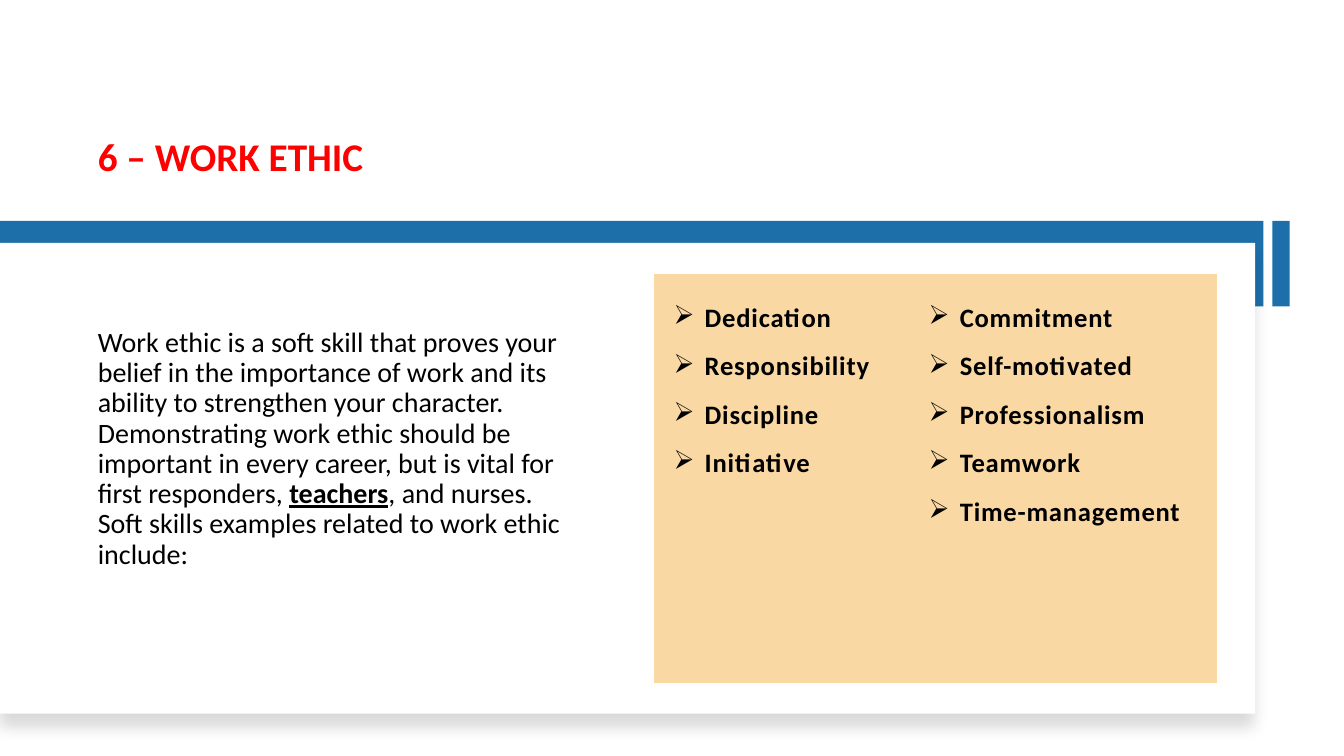
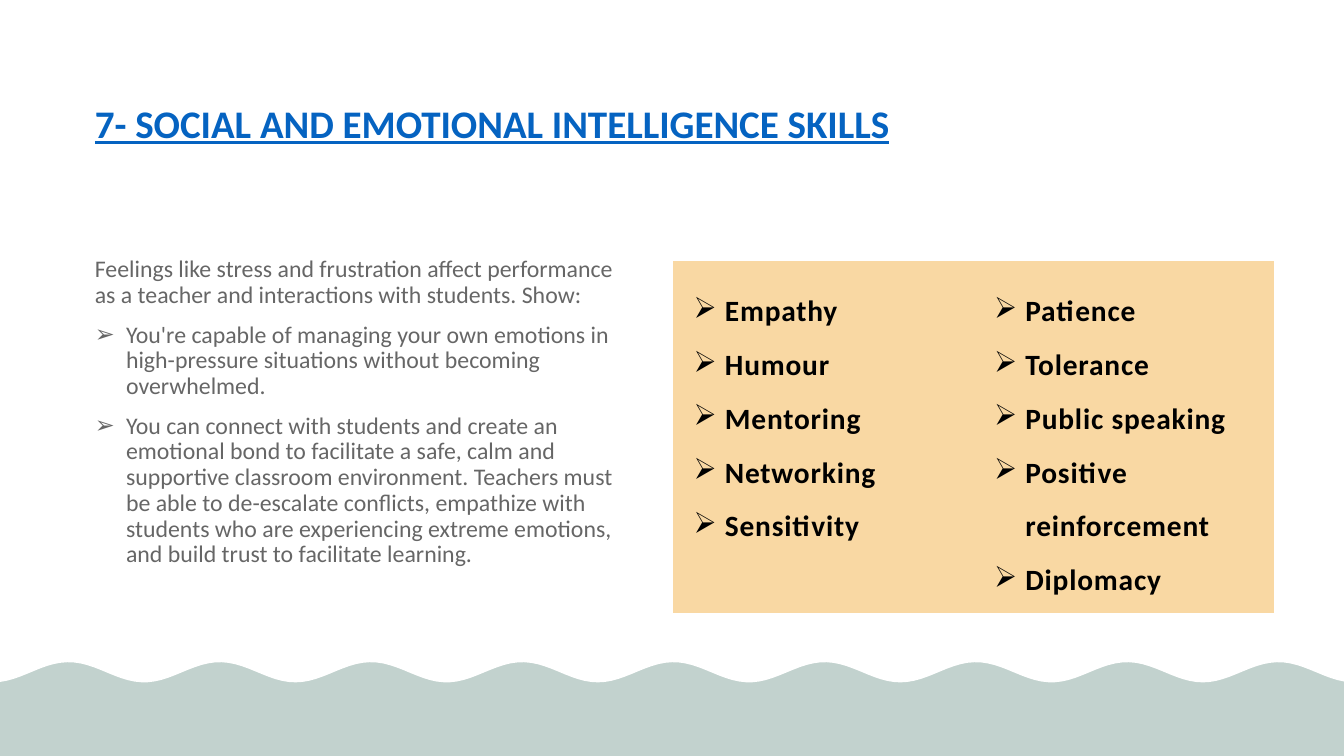
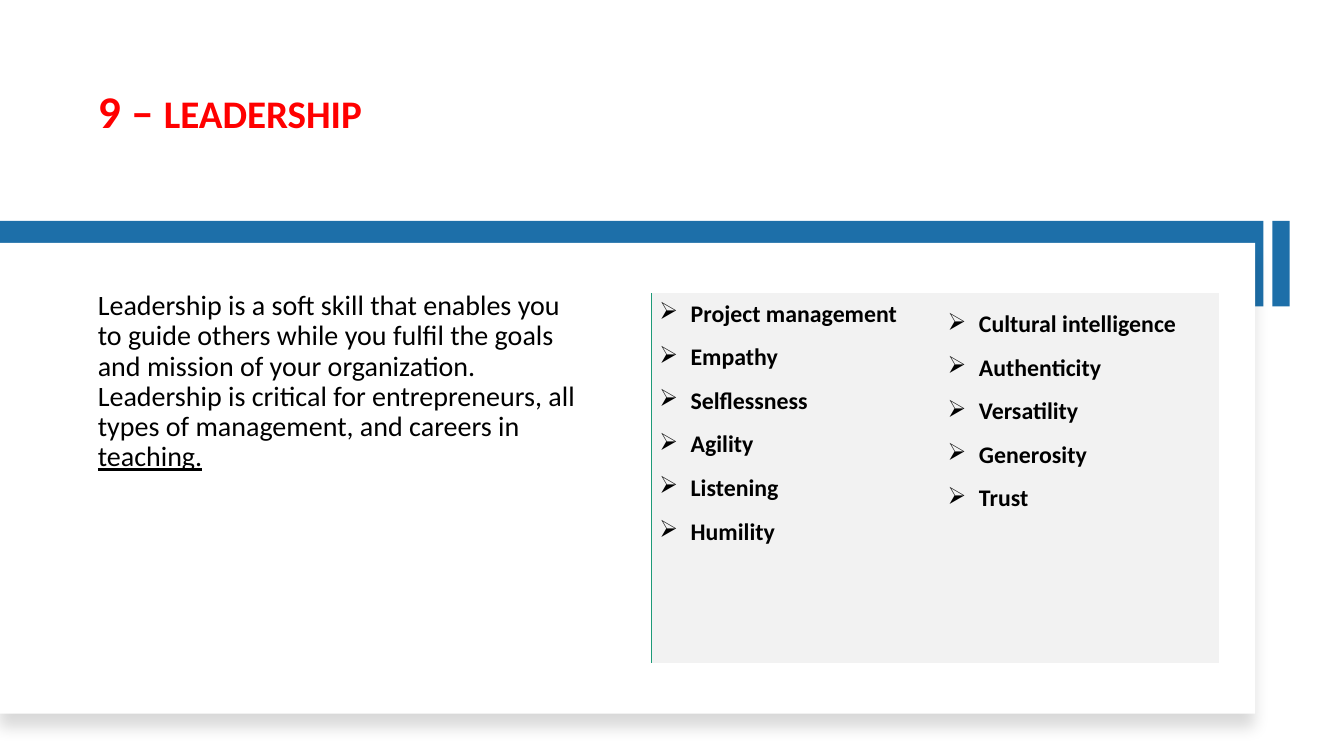
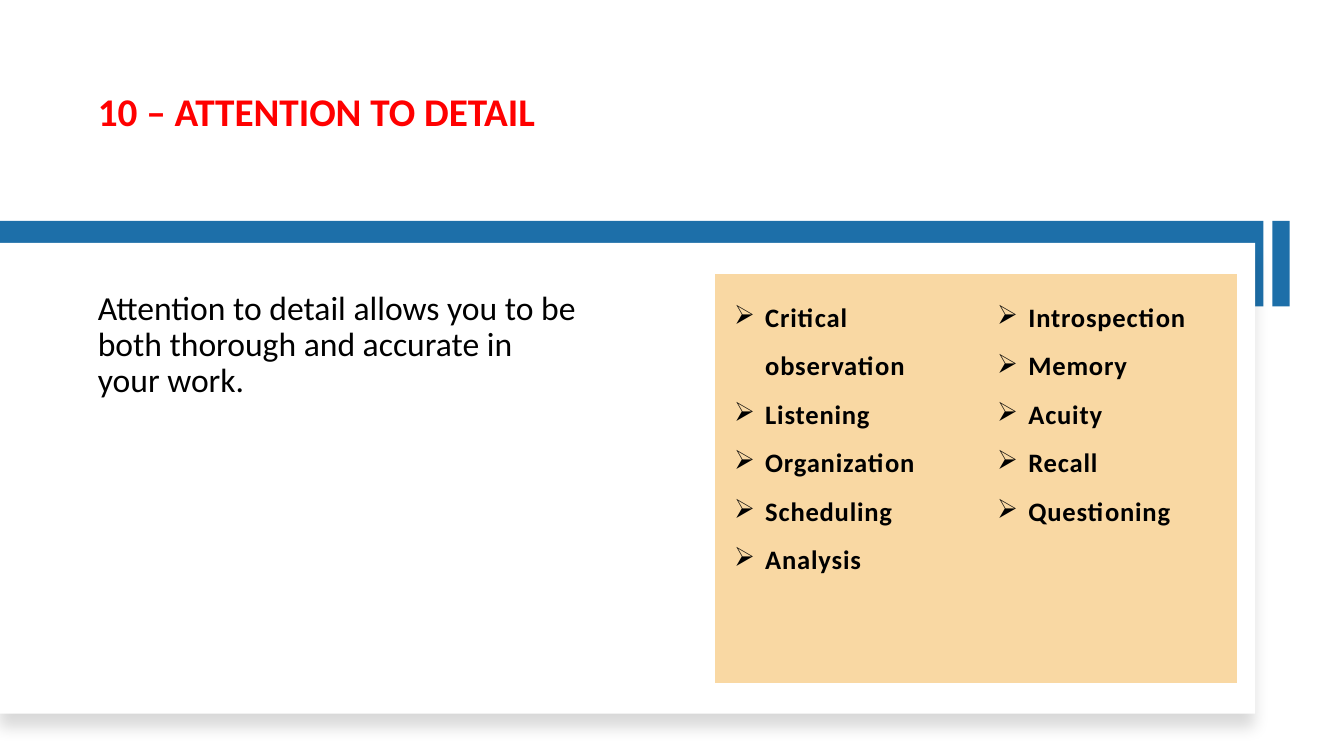
import math
from dataclasses import dataclass
from typing import Any, NamedTuple

import pptx
import pptx.dml.color
import pptx.enum.shapes
import pptx.enum.text
import pptx.oxml
import pptx.oxml.ns
import pptx.util

Inches = pptx.util.Inches
Pt = pptx.util.Pt
Anchor = pptx.enum.text.MSO_ANCHOR
RECT = pptx.enum.shapes.MSO_SHAPE.RECTANGLE

FACE = "Calibri"
INDENT = 0.31
NO_GRID = "{2D5ABB26-0587-4C30-8999-92F81FD0307C}"
COLORS = {
    "white": "FFFFFF",
    "black": "000000",
    "gray": "666666",
    "red": "FF0000",
    "link": "0563C1",
    "blue": "1D6FA9",
    "sea": "0E4D3C",
    "sand": "F9D8A3",
    "pale": "F2F2F2",
    "edge": "1D9A78",
}


class Box(NamedTuple):
    left: float
    top: float
    width: float
    height: float


class Run(NamedTuple):
    text: str
    size: float | None = None
    bold: bool = False
    under: bool = False


@dataclass(frozen=True)
class Para:
    runs: tuple[Run, ...]
    bullet: bool = False


@dataclass(frozen=True)
class Block:
    """Text for a placeholder, with its place and look."""
    paras: tuple[Para, ...]
    size: float
    color: str
    box: Box
    bold: bool = False
    anchor: Any = Anchor.TOP
    pad: tuple[float, float] = (0.05, 0.05)
    gap: float = 0


@dataclass(frozen=True)
class Grid:
    """A one-row table; each column holds a bulleted list."""
    left: float
    top: float
    height: float
    widths: tuple[float, ...]
    lists: tuple[tuple[str, ...], ...]
    size: float = 19
    fill: str = "sand"
    pad: tuple[float, float, float, float] = (0.19, 0.12, 0.19, 0.12)
    space: float = 0.6
    edge: bool = False


@dataclass(frozen=True)
class Page:
    title: Block
    body: Block
    grid: Grid
    waves: bool = False


PAGE = Box(0, 0, 13.33, 7.5)
HEAD = Box(0.87, 0.42, 11.01, 1.42)
TEXT = Box(0.87, 2.84, 4.96, 3.98)


def plain(text: str, bullet: bool = False) -> Para:
    return Para((Run(text),), bullet)


def head(*runs: Run, anchor: Any = Anchor.MIDDLE) -> Block:
    return Block((Para(runs),), 28, "red", HEAD, True, anchor)


PAGES = (
    Page(
        head(Run("6 – WORK ETHIC", bold=True), anchor=Anchor.BOTTOM),
        Block(
            (Para((
                Run("Work ethic is a soft skill that proves your belief in the "
                    "importance of work and its ability to strengthen your "
                    "character. Demonstrating work ethic should be important in "
                    "every career, but is vital for first responders, "),
                Run("teachers", bold=True, under=True),
                Run(", and nurses. Soft skills examples related to work ethic "
                    "include:"),
            )),),
            20, "black", TEXT, anchor=Anchor.MIDDLE, pad=(0.05, 0.8), gap=10),
        Grid(6.49, 2.72, 4.06, (2.53, 3.05), (
            ("Dedication", "Responsibility", "Discipline", "Initiative"),
            ("Commitment", "Self-motivated", "Professionalism", "Teamwork",
             "Time-management"),
        )),
    ),
    Page(
        Block((Para((Run("7- SOCIAL AND EMOTIONAL INTELLIGENCE SKILLS",
                         under=True),)),),
              27.9, "link", Box(0.84, 0.72, 11.79, 1.63), True,
              pad=(0.32, 0.05)),
        Block(
            (plain("Feelings like stress and frustration affect performance as a "
                   "teacher and interactions with students. Show:"),
             plain("You're capable of managing your own emotions in "
                   "high-pressure situations without becoming overwhelmed.", True),
             plain("You can connect with students and create an emotional bond "
                   "to facilitate a safe, calm and supportive classroom "
                   "environment. Teachers must be able to de-escalate conflicts, "
                   "empathize with students who are experiencing extreme "
                   "emotions, and build trust to facilitate learning.", True)),
            17, "gray", Box(0.84, 2.5, 5.48, 3.63), gap=10),
        Grid(6.67, 2.59, 3.46, (2.98, 2.99), (
            ("Empathy", "Humour", "Mentoring", "Networking", "Sensitivity"),
            ("Patience", "Tolerance", "Public speaking",
             "Positive reinforcement", "Diplomacy"),
        ), size=21, pad=(0.21, 0.14, 0.21, 0.14)),
        waves=True,
    ),
    Page(
        head(Run("9 – ", 32.4), Run("LEADERSHIP", 27.9)),
        Block(
            (Para((
                Run("Leadership is a soft skill that enables you to guide others "
                    "while you fulfil the goals and mission of your "
                    "organization. Leadership is critical for entrepreneurs, "
                    "all types of management, and careers in "),
                Run("teaching.", under=True),
            )),),
            20, "black", TEXT, gap=10),
        Grid(6.46, 2.91, 3.67, (2.86, 2.77), (
            ("Project management", "Empathy", "Selflessness", "Agility",
             "Listening", "Humility"),
            ("Cultural intelligence", "Authenticity", "Versatility",
             "Generosity", "Trust"),
        ), size=17, fill="pale", pad=(0.08, 0.02, 0.19, 0.16), space=0,
            edge=True),
    ),
    Page(
        head(Run("10 – ATTENTION TO DETAIL")),
        Block((plain("Attention to detail allows you to be both thorough and "
                     "accurate in your work."),),
              24, "black", TEXT, gap=10),
        Grid(7.09, 2.72, 4.06, (2.61, 2.57), (
            ("Critical observation", "Listening", "Organization", "Scheduling",
             "Analysis"),
            ("Introspection", "Memory", "Acuity", "Recall", "Questioning"),
        )),
    ),
)


def rgb(name: str) -> Any:
    return pptx.dml.color.RGBColor.from_string(COLORS[name])


def node(parent: Any, xml: str) -> None:
    """Append a drawing element given as XML with the prefix a."""
    space = pptx.oxml.ns.nsdecls("a")
    cut = min(i for i in (xml.find(" "), xml.find("/"), xml.find(">")) if i > 0)
    parent.append(pptx.oxml.parse_xml(f"{xml[:cut]} {space}{xml[cut:]}"))


def ink(para: Any, size: float, color: str, bold: bool) -> None:
    for font in (para.font, *(run.font for run in para.runs)):
        font.name = FACE
        font.size = Pt(size)
        font.bold = bold
        font.color.rgb = rgb(color)


def mark(para: Any, bullet: bool) -> None:
    """Give a paragraph the arrow bullet, or none."""
    props = para._p.get_or_add_pPr()
    depth = Inches(INDENT) if bullet else 0
    props.set("marL", str(depth))
    props.set("indent", str(-depth))
    sign = '<a:buChar char="➢"/>' if bullet else "<a:buNone/>"
    node(props, sign)


def write(holder: Any, block: Block) -> None:
    holder.left, holder.top, holder.width, holder.height = map(Inches, block.box)
    frame = holder.text_frame
    frame.word_wrap = True
    frame.auto_size = pptx.enum.text.MSO_AUTO_SIZE.NONE
    frame.vertical_anchor = block.anchor
    frame.margin_top, frame.margin_bottom = map(Inches, block.pad)
    for i, item in enumerate(block.paras):
        para = frame.add_paragraph() if i else frame.paragraphs[0]
        para.alignment = pptx.enum.text.PP_ALIGN.LEFT
        para.line_spacing = 0.9
        para.space_before = Pt(block.gap)
        for part in item.runs:
            para.add_run().text = part.text
        ink(para, block.size, block.color, block.bold)
        mark(para, item.bullet)
        for part, run in zip(item.runs, para.runs):
            if part.size:
                run.font.size = Pt(part.size)
            if part.bold:
                run.font.bold = True
            if part.under:
                run.font.underline = True


def paint(shape: Any, color: str) -> None:
    shape.shadow.inherit = False
    shape.fill.solid()
    shape.fill.fore_color.rgb = rgb(color)
    shape.line.fill.background()


def block(shapes: Any, box: Box, color: str) -> Any:
    """Add a plain filled rectangle."""
    shape = shapes.add_shape(RECT, *map(Inches, box))
    paint(shape, color)
    return shape


def frame(shapes: Any) -> list[Any]:
    """Draw the blue band, the raised white panel and the side tab."""
    band = block(shapes, Box(0, 2.19, 12.53, 0.85), "blue")
    panel = block(shapes, Box(0, 2.41, 12.45, 4.67), "white")
    glow = panel._element.spPr.find(pptx.oxml.ns.qn("a:effectLst"))
    node(glow, f'<a:outerShdw blurRad="{Pt(11)}" dist="{Pt(10)}" dir="5400000" '
               f'algn="t" rotWithShape="0"><a:srgbClr val="{COLORS["black"]}">'
               '<a:alpha val="15000"/></a:srgbClr></a:outerShdw>')
    tab = block(shapes, Box(12.28, 2.53, 0.85, 0.17), "blue")
    tab.rotation = 90
    return [band, panel, tab]


def sea(shapes: Any) -> list[Any]:
    """Draw a tinted page covered by a white sheet with a wavy lower edge."""
    group = shapes.add_group_shape()
    block(group.shapes, PAGE, "white")
    tint = block(group.shapes, PAGE, "sea")
    shade = tint._element.spPr.find(".//" + pptx.oxml.ns.qn("a:srgbClr"))
    node(shade, '<a:alpha val="25000"/>')

    mid, rise, pitch, trough, steps = 6.67, 0.1, 1.5, 1.43, 200
    edge = []
    for i in range(steps, -1, -1):
        x = PAGE.width * i / steps
        y = mid + rise * math.cos(math.tau * (x - trough) / pitch)
        edge.append((Inches(x), Inches(y)))
    pen = shapes.build_freeform(0, 0)
    pen.add_line_segments([(Inches(PAGE.width), 0), *edge], close=True)
    sheet = pen.convert_to_shape()
    paint(sheet, "white")
    return [group, sheet]


def table(shapes: Any, grid: Grid) -> None:
    box = Box(grid.left, grid.top, sum(grid.widths), grid.height)
    item = shapes.add_table(1, len(grid.lists), *map(Inches, box)).table
    item.first_row = item.horz_banding = False
    item._tbl.tblPr.find(pptx.oxml.ns.qn("a:tableStyleId")).text = NO_GRID
    for col, (width, words) in enumerate(zip(grid.widths, grid.lists)):
        item.columns[col].width = Inches(width)
        cell = item.cell(0, col)
        (cell.margin_left, cell.margin_top,
         cell.margin_right, cell.margin_bottom) = map(Inches, grid.pad)
        tight = grid.edge and col == 0
        if tight:
            cell.margin_top = Inches(0.06)
            node(cell._tc.get_or_add_tcPr(),
                 f'<a:lnL w="{Pt(1)}"><a:solidFill><a:srgbClr '
                 f'val="{COLORS["edge"]}"/></a:solidFill></a:lnL>')
        cell.fill.solid()
        cell.fill.fore_color.rgb = rgb(grid.fill)
        for i, word in enumerate(words):
            para = cell.text_frame.add_paragraph() if i else cell.text_frame.paragraphs[0]
            run = para.add_run()
            run.text = word
            para.line_spacing = 1.0 if tight and i == 0 else 1.5
            ink(para, grid.size, "black", True)
            mark(para, True)
            if grid.space:
                run._r.get_or_add_rPr().set("spc", str(round(grid.space * 100)))


def build(deck: Any, page: Page) -> None:
    slide = deck.slides.add_slide(deck.slide_layouts[1])
    shapes = slide.shapes
    back = sea(shapes) if page.waves else frame(shapes)
    for i, shape in enumerate(back):
        shapes._spTree.insert(2 + i, shape._element)
    write(shapes.title, page.title)
    write(slide.placeholders[1], page.body)
    table(shapes, page.grid)


def main() -> None:
    deck = pptx.Presentation()
    deck.slide_width = Inches(PAGE.width)
    deck.slide_height = Inches(PAGE.height)
    for page in PAGES:
        build(deck, page)
    deck.save("out.pptx")


if __name__ == "__main__":
    main()
